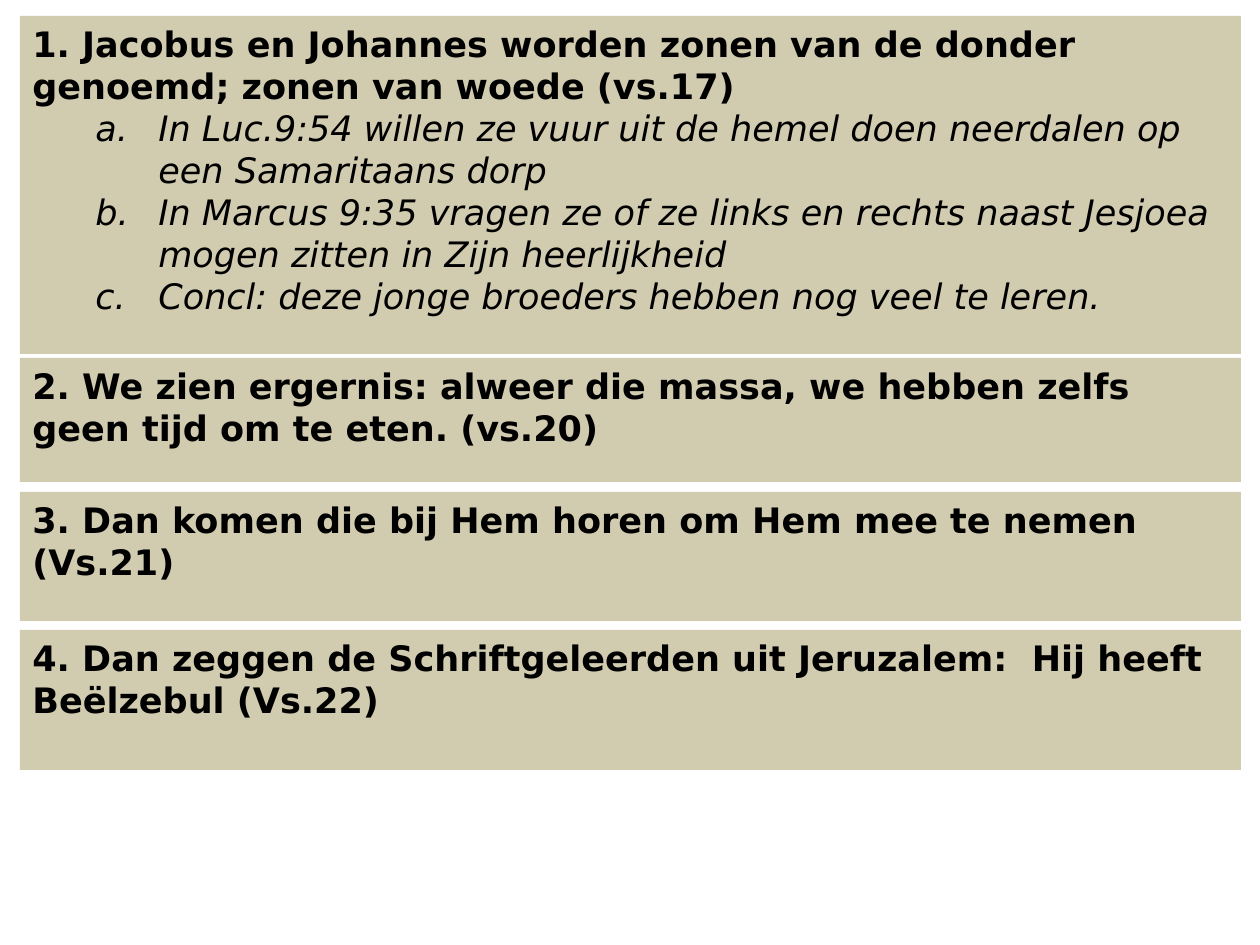
from pptx import Presentation
from pptx.dml.color import RGBColor
from pptx.enum.shapes import MSO_SHAPE
from pptx.enum.text import MSO_ANCHOR, MSO_AUTO_SIZE, PP_ALIGN
from pptx.util import Emu, Pt
from lxml.etree import SubElement
from pptx.oxml.ns import qn

PX_PER_INCH = 126


def px(n):
    return Emu(round(n * 914400 / PX_PER_INCH))


def color(value):
    return RGBColor.from_string(value)


class Deck:
    font = "DejaVu Sans"
    size = 20
    ink = "000000"
    panel_fill = "D1CBAF"

    def __init__(self, width, height):
        self.prs = Presentation()
        self.prs.slide_width, self.prs.slide_height = px(width), px(height)
        self.s = self.prs.slides.add_slide(self.prs.slide_layouts[6])

    def panel(self, x, y, w, h, heading, points=()):
        sp = self.s.shapes.add_shape(MSO_SHAPE.RECTANGLE, px(x), px(y), px(w), px(h))
        sp.shadow.inherit = False
        sp.fill.solid()
        sp.fill.fore_color.rgb = color(self.panel_fill)
        sp.line.fill.background()
        tf = sp.text_frame
        tf.word_wrap = True
        tf.auto_size = MSO_AUTO_SIZE.NONE
        tf.vertical_anchor = MSO_ANCHOR.TOP
        tf.text = heading
        self.format(tf.paragraphs[0], bold=True)
        for point in points:
            self.lettered(tf.add_paragraph(), point)

    def lettered(self, p, text):
        p.text = text
        p.level = 1
        pPr = p._p.get_or_add_pPr()
        pPr.set("marL", str(px(126)))
        pPr.set("indent", str(-px(63)))
        SubElement(pPr, qn("a:buFont"), typeface="+mj-lt")
        SubElement(pPr, qn("a:buAutoNum"), type="alphaLcPeriod")
        self.format(p, italic=True)

    def format(self, p, bold=False, italic=False):
        p.alignment = PP_ALIGN.LEFT
        for r in p.runs:
            r.font.name = self.font
            r.font.size = Pt(self.size)
            r.font.bold = bold
            r.font.italic = italic
            r.font.color.rgb = color(self.ink)


def main():
    deck = Deck(1260, 945)
    panels = [
        (16, 338, "1. Jacobus en Johannes worden zonen van de donder genoemd; zonen van woede (vs.17)", [
            "In Luc.9:54 willen ze vuur uit de hemel doen neerdalen op een Samaritaans dorp",
            "In Marcus 9:35 vragen ze of ze links en rechts naast Jesjoea mogen zitten in Zijn heerlijkheid",
            "Concl: deze jonge broeders hebben nog veel te leren.",
        ]),
        (358, 124, "2. We zien ergernis: alweer die massa, we hebben zelfs geen tijd om te eten. (vs.20)", []),
        (492, 129, "3. Dan komen die bij Hem horen om Hem mee te nemen (Vs.21)", []),
        (630, 140, "4. Dan zeggen de Schriftgeleerden uit Jeruzalem:  Hij heeft Beëlzebul (Vs.22)", []),
    ]
    for y, h, heading, points in panels:
        deck.panel(20, y, 1221, h, heading, points)
    deck.prs.save("out.pptx")


if __name__ == "__main__":
    main()
